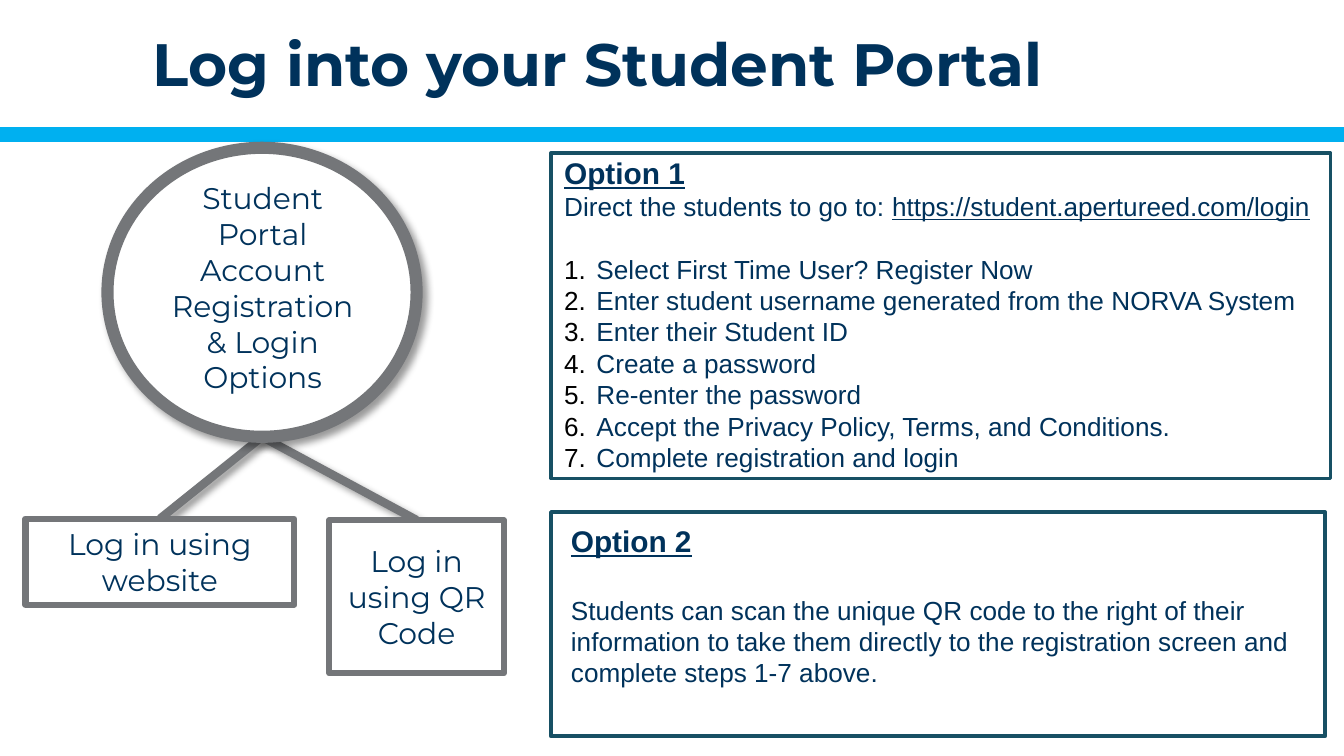
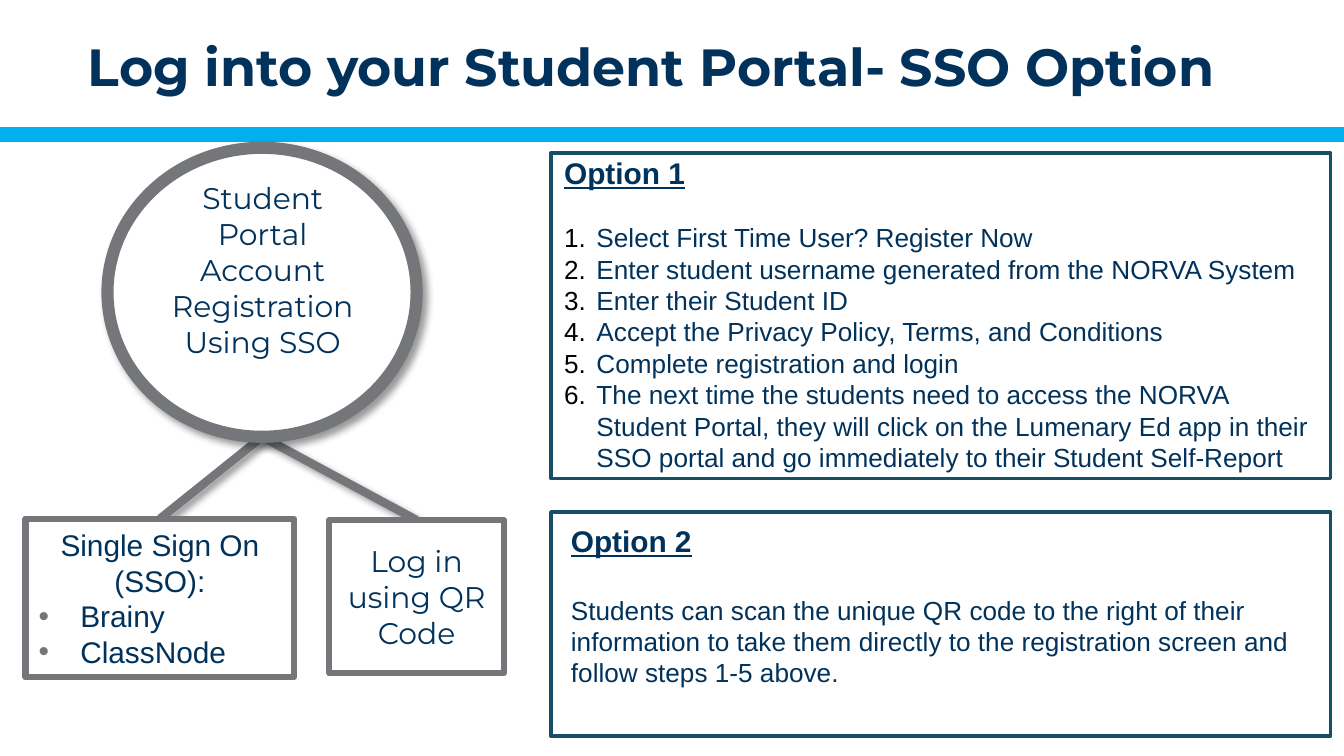
from dataclasses import dataclass, replace
from typing import Optional

from lxml.etree import SubElement
from pptx import Presentation
from pptx.dml.color import RGBColor
from pptx.enum.shapes import MSO_CONNECTOR, MSO_SHAPE
from pptx.enum.text import MSO_ANCHOR, PP_ALIGN
from pptx.oxml.ns import qn
from pptx.util import Inches, Pt

NAVY = RGBColor(0x00, 0x32, 0x5B)
SKY = RGBColor(0x00, 0xB0, 0xF0)
GRAY = RGBColor(0x74, 0x76, 0x79)
TEAL = RGBColor(0x17, 0x50, 0x64)
WHITE = RGBColor(0xFF, 0xFF, 0xFF)
BLACK = RGBColor(0x00, 0x00, 0x00)

HEADING_FONT = "Montserrat"
BODY_FONT = "Arial"
SLIDE_WIDTH = 10


@dataclass(frozen=True)
class Box:
    left: float
    top: float
    width: float
    height: float

    def lengths(self) -> tuple:
        return tuple(Inches(v) for v in (self.left, self.top, self.width, self.height))


@dataclass(frozen=True)
class Bullet:
    tag: str
    attribute: str
    value: str
    color: RGBColor
    indent: float


@dataclass(frozen=True)
class Line:
    text: str
    size: float = 14
    font: str = BODY_FONT
    bold: bool = False
    underline: bool = False
    centered: bool = False
    bullet: Optional[Bullet] = None
    gap: float = 0
    address: str = ""


@dataclass(frozen=True)
class PortalSlide:
    title: Line
    title_box: Box
    circle: list[Line]
    sign_in: list[Line]
    sign_in_height: float
    option_1: list[Line]
    last_step: str
    option_2_width: float


NUMBER = Bullet("a:buAutoNum", "type", "arabicPeriod", BLACK, 0.24)
DOT = Bullet("a:buChar", "char", "•", GRAY, 0.31)

CIRCLE = Box(0.8, 1.1, 2.3, 2.15)
CIRCLE_TEXT = Box(1.09, 1.29, 1.73, 1.72)
QR_BOX = Box(2.45, 3.87, 1.3, 1.14)
SIGN_IN_BOX = Box(0.19, 3.86, 2, 0.64)
OPTION_1_FRAME = Box(4.1, 1.14, 5.8, 2.42)
OPTION_1_TEXT = Box(4.1, 1.1, 5.8, 2.49)
OPTION_2_FRAME = Box(4.1, 3.81, 5.8, 1.67)
OPTION_2_TEXT = Box(4.15, 3.84, 5.66, 1.35)


def label(text: str, font: str = HEADING_FONT) -> Line:
    return Line(text, 16, font, centered=True)


def title(text: str, size: float) -> Line:
    return Line(text, size, HEADING_FONT, bold=True, centered=True)


def option_heading(number: int) -> Line:
    return Line(f"Option {number}", 16, bold=True, underline=True)


def numbered(steps: list[str]) -> list[Line]:
    """Numbered steps, set off by one line from what is above."""
    return [Line(step, bullet=NUMBER, gap=0 if i else 16.8)
            for i, step in enumerate(steps)]


FIRST_STEPS = [
    "Select First Time User? Register Now",
    "Enter student username generated from the NORVA System",
    "Enter their Student ID",
]
CIRCLE_START = label("Student Portal Account Registration")

SLIDES = [
    PortalSlide(
        title=title("Log into your Student Portal", 32),
        title_box=Box(0.63, 0.14, 7.64, 0.64),
        circle=[CIRCLE_START, label("& Login Options")],
        sign_in=[label("Log in using website")],
        sign_in_height=0.64,
        option_1=[
            option_heading(1),
            Line("Direct the students to go to:\u00a0",
                 address="https://student.apertureed.com/login"),
            *numbered(FIRST_STEPS + [
                "Create a password",
                "Re-enter the password",
                "Accept the Privacy Policy, Terms, and Conditions.",
                "Complete registration and login",
            ]),
        ],
        last_step="complete steps 1-7 above.",
        option_2_width=5.76,
    ),
    PortalSlide(
        title=title("Log into your Student Portal- SSO Option", 28),
        title_box=Box(0.06, 0.13, 9.57, 0.64),
        circle=[CIRCLE_START, label("Using SSO")],
        sign_in=[
            label("Single Sign On (SSO):", BODY_FONT),
            Line("Brainy", 16, bullet=DOT),
            Line("ClassNode", 16, bullet=DOT),
        ],
        sign_in_height=1.18,
        option_1=[
            option_heading(1),
            *numbered(FIRST_STEPS + [
                "Accept the Privacy Policy, Terms, and Conditions",
                "Complete registration and login",
                "The next time the students need to access the NORVA Student Portal, "
                "they will click on the Lumenary Ed app in their SSO portal and go "
                "immediately to their Student Self-Report",
            ]),
        ],
        last_step="follow steps 1-5 above.",
        option_2_width=5.8,
    ),
]


def add_bullet(paragraph, bullet: Bullet) -> None:
    properties = paragraph._p.get_or_add_pPr()
    properties.set("marL", str(Inches(bullet.indent)))
    properties.set("indent", str(-Inches(bullet.indent)))
    color = SubElement(properties, qn("a:buClr"))
    SubElement(color, qn("a:srgbClr"), val=str(bullet.color))
    SubElement(properties, qn("a:buFont"), typeface=BODY_FONT)
    SubElement(properties, qn(bullet.tag), {bullet.attribute: bullet.value})


def write(frame, lines: list[Line], anchor: MSO_ANCHOR = MSO_ANCHOR.TOP) -> None:
    frame.word_wrap = True
    frame.vertical_anchor = anchor
    for i, line in enumerate(lines):
        paragraph = frame.add_paragraph() if i else frame.paragraphs[0]
        if line.bullet:
            add_bullet(paragraph, line.bullet)
        paragraph.alignment = PP_ALIGN.CENTER if line.centered else PP_ALIGN.LEFT
        if line.gap:
            paragraph.space_before = Pt(line.gap)
        paragraph.font.name = line.font
        paragraph.font.size = Pt(line.size)
        paragraph.font.bold = line.bold
        paragraph.font.color.rgb = NAVY
        paragraph.add_run().text = line.text
        if line.underline:
            paragraph.font.underline = True
        if line.address:
            address = paragraph.add_run()
            address.text = line.address
            address.font.underline = True


def add_text(slide, box: Box, lines: list[Line],
             anchor: MSO_ANCHOR = MSO_ANCHOR.TOP) -> None:
    write(slide.shapes.add_textbox(*box.lengths()).text_frame, lines, anchor)


def add_outlined(slide, preset: MSO_SHAPE, box: Box, color: RGBColor,
                 weight: float, filled: bool = True):
    shape = slide.shapes.add_shape(preset, *box.lengths())
    shape.shadow.inherit = False
    if filled:
        shape.fill.solid()
        shape.fill.fore_color.rgb = WHITE
    else:
        shape.fill.background()
    shape.line.color.rgb = color
    shape.line.width = Pt(weight)
    return shape


def add_line(slide, start: tuple[float, float], end: tuple[float, float],
             color: RGBColor, weight: float):
    """Draw a straight line and return its empty effect list."""
    line = slide.shapes.add_connector(
        MSO_CONNECTOR.STRAIGHT, *(Inches(v) for v in start + end))
    line.line.color.rgb = color
    line.line.width = Pt(weight)
    return SubElement(line._element.spPr, qn("a:effectLst"))


def cast_shadow(effects) -> None:
    shadow = SubElement(effects, qn("a:outerShdw"), blurRad=str(Pt(4)),
                        dist=str(Pt(3)), dir="2700000", rotWithShape="0")
    color = SubElement(shadow, qn("a:srgbClr"), val=str(BLACK))
    SubElement(color, qn("a:alpha"), val="40000")


def add_login_tree(slide, content: PortalSlide) -> None:
    """Draw the circle and the two ways to log in that hang from it."""
    sign_in_box = replace(SIGN_IN_BOX, height=content.sign_in_height)
    root = (CIRCLE.left + CIRCLE.width / 2, CIRCLE.top + CIRCLE.height)
    for box in (sign_in_box, QR_BOX):
        branch_end = (box.left + box.width / 2, box.top)
        cast_shadow(add_line(slide, root, branch_end, GRAY, 4.5))

    circle = add_outlined(slide, MSO_SHAPE.OVAL, CIRCLE, GRAY, 6.5)
    cast_shadow(circle._element.spPr.find(qn("a:effectLst")))
    add_text(slide, CIRCLE_TEXT, content.circle)

    for box, lines in ((QR_BOX, [label("Log in using QR Code")]),
                       (sign_in_box, content.sign_in)):
        way = add_outlined(slide, MSO_SHAPE.RECTANGLE, box, GRAY, 3.25)
        write(way.text_frame, lines, MSO_ANCHOR.MIDDLE)


def add_options(slide, content: PortalSlide) -> None:
    option_2 = [
        option_heading(2),
        Line("Students can scan the unique QR code to the right of their information "
             f"to take them directly to the registration screen and {content.last_step}",
             gap=19),
    ]
    option_2_frame = replace(OPTION_2_FRAME, width=content.option_2_width)
    for text_box, lines, frame in (
            (OPTION_2_TEXT, option_2, option_2_frame),
            (OPTION_1_TEXT, content.option_1, OPTION_1_FRAME)):
        add_text(slide, text_box, lines)
        add_outlined(slide, MSO_SHAPE.RECTANGLE, frame, TEAL, 2, filled=False)


def main() -> None:
    deck = Presentation()
    deck.slide_width = Inches(SLIDE_WIDTH)
    deck.slide_height = Inches(SLIDE_WIDTH * 9 / 16)
    for content in SLIDES:
        slide = deck.slides.add_slide(deck.slide_layouts[6])
        add_line(slide, (0, 1), (SLIDE_WIDTH, 1), SKY, 8)
        add_text(slide, content.title_box, [content.title], MSO_ANCHOR.BOTTOM)
        add_login_tree(slide, content)
        add_options(slide, content)
    deck.save("out.pptx")


if __name__ == "__main__":
    main()
